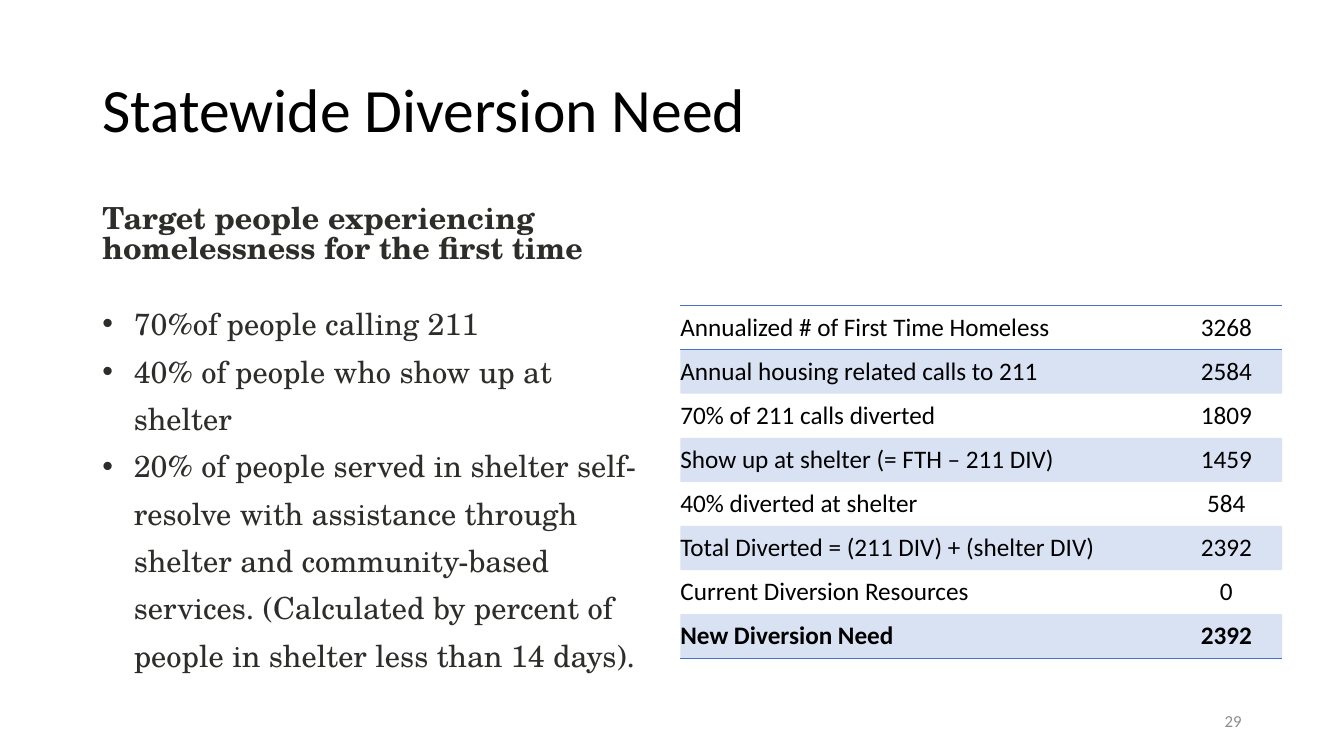
from lxml import etree
from pptx import Presentation, util as u
from pptx.dml.color import RGBColor
from pptx.enum import text
from pptx.oxml import ns

PX = 9525  # EMU per px, 1280 x 720 px slide
BLACK = RGBColor(0x00, 0x00, 0x00)
CHARCOAL = RGBColor(0x2D, 0x2D, 0x2A)
GREY = RGBColor(0x8C, 0x8C, 0x8C)
BLUE = RGBColor(0x44, 0x72, 0xC4)
SANS, SERIF = "Calibri", "TeX Gyre Schola"
NO_GRID = "{2D5ABB26-0587-4C30-8999-92F81FD0307C}"

BULLETS = [
    "70%of people calling 211",
    "40% of people who show up at shelter",
    "20% of people served in shelter self-resolve with assistance through "
    "shelter and community-based services. (Calculated by percent of people "
    "in shelter less than 14 days).",
]
NEEDS = [
    ("Annualized # of First Time Homeless", "3268"),
    ("Annual housing related calls to 211", "2584"),
    ("70% of 211 calls diverted", "1809"),
    ("Show up at shelter (= FTH – 211 DIV)", "1459"),
    ("40% diverted at shelter", "584"),
    ("Total Diverted = (211 DIV) + (shelter DIV)", "2392"),
    ("Current Diversion Resources", "0"),
    ("New Diversion Need", "2392"),
]


def px(n):
    return u.Emu(n * PX)


def set_all(obj, values):
    for name, value in values.items():
        setattr(obj, name, value)


def write(p, words, font, size, color, bold=False, **layout):
    set_all(p, layout)
    r = p.add_run()
    r.text = words
    set_all(r.font, {"name": font, "size": u.Pt(size), "bold": bold})
    r.font.color.rgb = color


def add_bullet(p, indent):
    pPr = p._p.get_or_add_pPr()
    pPr.set("marL", str(px(indent)))
    pPr.set("indent", str(-px(indent)))
    etree.SubElement(pPr, ns.qn("a:buFont"), typeface="Arial")
    etree.SubElement(pPr, ns.qn("a:buChar"), char="•")


def add_box(s, box, anchor=text.MSO_ANCHOR.MIDDLE):
    tf = s.shapes.add_textbox(*map(px, box)).text_frame
    set_all(tf, {"word_wrap": True, "vertical_anchor": anchor})
    return tf


def add_border(cell, side):
    ln = etree.SubElement(cell._tc.get_or_add_tcPr(), ns.qn("a:" + side),
                          w=str(u.Pt(1)))
    fill = etree.SubElement(ln, ns.qn("a:solidFill"))
    etree.SubElement(fill, ns.qn("a:srgbClr"), val=str(BLUE))


def tint(cell, percent):
    cell.fill.solid()
    cell.fill.fore_color.rgb = BLUE
    clr = cell._tc.tcPr.find(ns.qn("a:solidFill")).find(ns.qn("a:srgbClr"))
    etree.SubElement(clr, ns.qn("a:alpha"), val=str(percent * 1000))


def add_needs_table(s, left, top, widths, row_height):
    rows = len(NEEDS)
    box = map(px, (left, top, sum(widths), row_height * rows))
    frame = s.shapes.add_table(rows, len(widths), *box)
    table = frame.table
    set_all(table, {"first_row": False, "horz_banding": False})
    table._tbl.tblPr.find(ns.qn("a:tableStyleId")).text = NO_GRID
    for column, width in zip(table.columns, widths):
        column.width = px(width)
    last = rows - 1
    aligns = (text.PP_ALIGN.LEFT, text.PP_ALIGN.CENTER)
    for i, need in enumerate(NEEDS):
        table.rows[i].height = px(row_height)
        for j, words in enumerate(need):
            cell = table.cell(i, j)
            set_all(cell, {"margin_left": 0, "margin_right": 0,
                           "margin_top": 0, "margin_bottom": 0,
                           "vertical_anchor": text.MSO_ANCHOR.MIDDLE})
            if i == 0:
                add_border(cell, "lnT")
            if i in (0, last):
                add_border(cell, "lnB")
            if i % 2:
                tint(cell, 20)
            write(cell.text_frame.paragraphs[0], words, SANS, 18, BLACK,
                  bold=i == last, alignment=aligns[j])


def add_targets(s, box):
    tf = add_box(s, box, text.MSO_ANCHOR.TOP)
    write(tf.paragraphs[0],
          "Target people experiencing homelessness for the first time",
          SERIF, 21.7, CHARCOAL, bold=True, line_spacing=0.8)
    for i, words in enumerate(BULLETS):
        p = tf.add_paragraph()
        add_bullet(p, 30)
        write(p, words, SERIF, 21.7, CHARCOAL, line_spacing=1.3,
              space_before=u.Pt(0 if i else 21))


def main():
    prs = Presentation()
    set_all(prs, {"slide_width": px(1280), "slide_height": px(720)})
    s = prs.slides.add_slide(prs.slide_layouts[6])

    # Title
    title = add_box(s, (88, 38, 1104, 139))
    write(title.paragraphs[0], "Statewide Diversion Need", SANS, 44, BLACK,
          line_spacing=0.9)

    # Targets on the left, figures on the right
    add_targets(s, (88, 192, 544, 457))
    add_needs_table(s, 648, 291, (467, 106), 42)

    # Slide number
    number = add_box(s, (904, 667, 288, 38))
    write(number.paragraphs[0], "29", SANS, 12, GREY,
          alignment=text.PP_ALIGN.RIGHT)

    prs.save("out.pptx")


if __name__ == "__main__":
    main()
